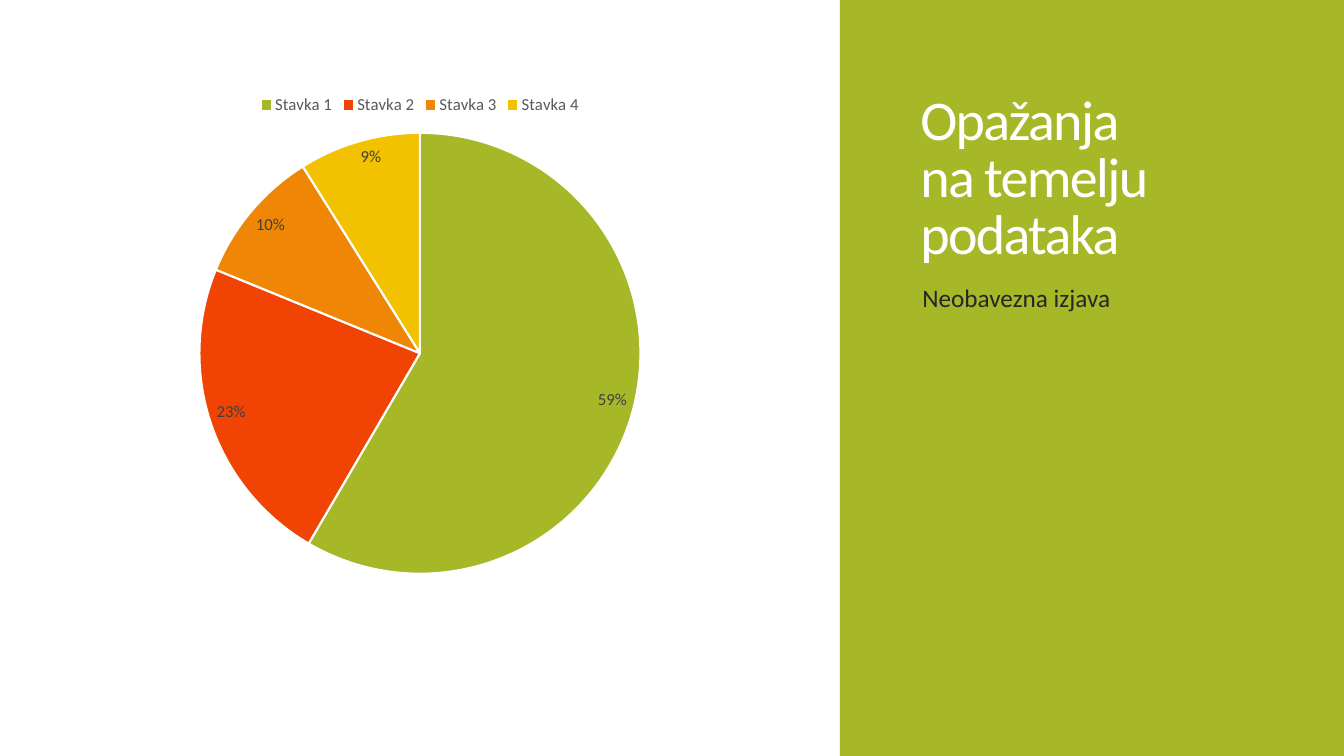
from pptx import Presentation
from pptx import util as u
from pptx.chart.data import CategoryChartData
from pptx.dml.color import RGBColor
from pptx.enum import chart as charts, shapes, text

THEME = {
    "font": "Calibri",
    "panel": "A6B727",
    "slices": ["A6B727", "F04304", "EF8606", "F2C100"],
    "white": "FFFFFF",
    "title": {"size": 40, "color": "FFFFFF"},
    "body": {"size": 18, "color": "262626"},
    "legend": {"size": 12, "color": "595959"},
    "labels": {"size": 12, "color": "404040"},
}


def style_font(font, role):
    font.name = THEME["font"]
    font.size = u.Pt(THEME[role]["size"])
    font.color.rgb = RGBColor.from_string(THEME[role]["color"])


presentation = Presentation()
presentation.slide_width = u.Inches(13.33)
presentation.slide_height = u.Inches(7.5)
slide = presentation.slides.add_slide(presentation.slide_layouts[6])

# Side panel
panel = slide.shapes.add_shape(
    shapes.MSO_SHAPE.RECTANGLE,
    u.Inches(8.33), u.Inches(0), u.Inches(5), u.Inches(7.5))
panel.shadow.inherit = False
panel.fill.solid()
panel.fill.fore_color.rgb = RGBColor.from_string(THEME["panel"])
panel.line.fill.background()

# Title and statement
text_blocks = [
    {"role": "title", "box": (9.03, 0.59, 3.7, 2.1),
     "words": "Opažanja\vna temelju podataka",
     "anchor": text.MSO_ANCHOR.BOTTOM, "line_spacing": 0.85, "tracking": -120},
    {"role": "body", "box": (9.05, 2.75, 3.72, 3.42),
     "words": "Neobavezna izjava",
     "anchor": text.MSO_ANCHOR.TOP, "line_spacing": 1.0, "tracking": 0},
]
for block in text_blocks:
    shape = slide.shapes.add_textbox(*map(u.Inches, block["box"]))
    frame = shape.text_frame
    frame.word_wrap = True
    frame.vertical_anchor = block["anchor"]
    paragraph = frame.paragraphs[0]
    paragraph.text = block["words"]
    paragraph.line_spacing = block["line_spacing"]
    for run in paragraph.runs:
        style_font(run.font, block["role"])
        run.font._element.set("spc", str(block["tracking"]))

# Pie chart
chart_data = CategoryChartData()
chart_data.categories = [f"Stavka {number}" for number in range(1, 5)]
chart_data.add_series("Series 1", (59, 23, 10, 9))
chart = slide.shapes.add_chart(
    charts.XL_CHART_TYPE.PIE,
    u.Inches(0.83), u.Inches(0.83), u.Inches(6.67), u.Inches(5),
    chart_data).chart
chart.has_title = False
chart.font.name = THEME["font"]
chart.font.size = u.Pt(10)

# Legend
chart.has_legend = True
legend_format = {
    "position": charts.XL_LEGEND_POSITION.TOP,
    "include_in_layout": False,
}
for name, value in legend_format.items():
    setattr(chart.legend, name, value)
style_font(chart.legend.font, "legend")

# Slices
plot = chart.plots[0]
plot.vary_by_categories = True
for index, color in enumerate(THEME["slices"]):
    slice_format = plot.series[0].points[index].format
    slice_format.fill.solid()
    slice_format.fill.fore_color.rgb = RGBColor.from_string(color)
    slice_format.line.color.rgb = RGBColor.from_string(THEME["white"])
    slice_format.line.width = u.Pt(1.5)

# Slice labels: the values are rounded shares, so they carry the percent sign
labels = plot.series[0].data_labels
label_format = {
    "show_value": True,
    "show_percentage": False,
    "number_format": '0"%"',
    "number_format_is_linked": False,
    "position": charts.XL_LABEL_POSITION.INSIDE_END,
}
for name, value in label_format.items():
    setattr(labels, name, value)
style_font(labels.font, "labels")

presentation.save("out.pptx")
